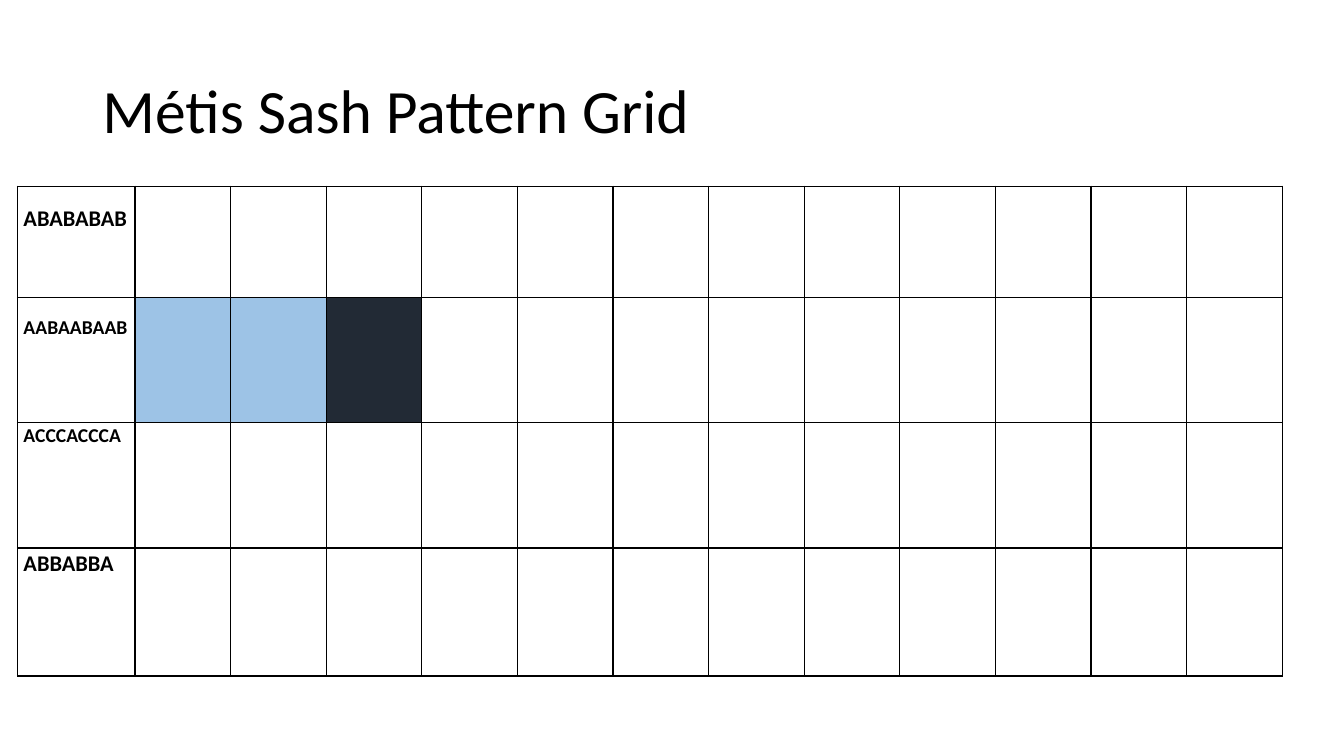
from lxml import etree
from pptx import Presentation
from pptx.dml.color import RGBColor
from pptx.enum import text as text_enum
from pptx.oxml import ns
from pptx.util import Pt

PATTERNS = [("ABABABAB", 16, 12), ("AABAABAAB", 14, 12), ("ACCCACCCA", 14, 0), ("ABBABBA", 16, 0)]
ROW_HEIGHTS = [79.3, 89.6, 89.6, 91.5]
LABEL_WIDTH = 84
SQUARE_COUNT = 12
SQUARE_FILLS = {(1, 1): "9DC3E6", (1, 2): "9DC3E6", (1, 3): "222A35"}


def color(value):
    return RGBColor.from_string(value)


def write_text(frame, content, size, bold=False, spacing=1.0):
    paragraph = frame.paragraphs[0]
    paragraph.alignment = text_enum.PP_ALIGN.LEFT
    paragraph.line_spacing = spacing
    run = paragraph.add_run()
    run.text = content
    run.font.name = "Calibri"
    run.font.size = Pt(size)
    run.font.bold = bold
    run.font.color.rgb = color("000000")


def add_borders(cell):
    properties = cell._tc.get_or_add_tcPr()
    for index, side in enumerate(("a:lnL", "a:lnR", "a:lnT", "a:lnB")):
        line = etree.Element(ns.qn(side), w=str(Pt(1)))
        fill = etree.SubElement(line, ns.qn("a:solidFill"))
        etree.SubElement(fill, ns.qn("a:srgbClr"), val="000000")
        properties.insert(index, line)


def add_title(slide, left, top, width, height):
    title = slide.shapes.title
    title.left, title.top, title.width, title.height = map(Pt, (left, top, width, height))
    title.text_frame.word_wrap = True
    title.text_frame.vertical_anchor = text_enum.MSO_ANCHOR.MIDDLE
    write_text(title.text_frame, "Métis Sash Pattern Grid", 44, spacing=0.9)


def add_pattern_grid(slide, left, top, width):
    table = slide.shapes.add_table(
        len(PATTERNS), SQUARE_COUNT + 1, Pt(left), Pt(top), Pt(width), Pt(sum(ROW_HEIGHTS))
    ).table
    table.first_row = table.horz_banding = False
    square_width = (width - LABEL_WIDTH) / SQUARE_COUNT
    for index, column in enumerate(table.columns):
        column.width = Pt(square_width if index else LABEL_WIDTH)
    for row_index, (pattern, size, top_margin) in enumerate(PATTERNS):
        table.rows[row_index].height = Pt(ROW_HEIGHTS[row_index])
        for column_index in range(SQUARE_COUNT + 1):
            cell = table.cell(row_index, column_index)
            fill = SQUARE_FILLS.get((row_index, column_index))
            if fill:
                cell.fill.solid()
                cell.fill.fore_color.rgb = color(fill)
            else:
                cell.fill.background()
            add_borders(cell)
        label = table.cell(row_index, 0)
        label.margin_left = label.margin_right = Pt(4.3)
        label.margin_top, label.margin_bottom = Pt(top_margin), Pt(0)
        write_text(label.text_frame, pattern, size, bold=True, spacing=1.07)


def main():
    presentation = Presentation()
    presentation.slide_width, presentation.slide_height = Pt(960), Pt(540)
    slide = presentation.slides.add_slide(presentation.slide_layouts[5])
    add_title(slide, 66, 28.8, 828, 104.4)
    add_pattern_grid(slide, 12.5, 133, 903.6)
    presentation.save("out.pptx")


if __name__ == "__main__":
    main()
